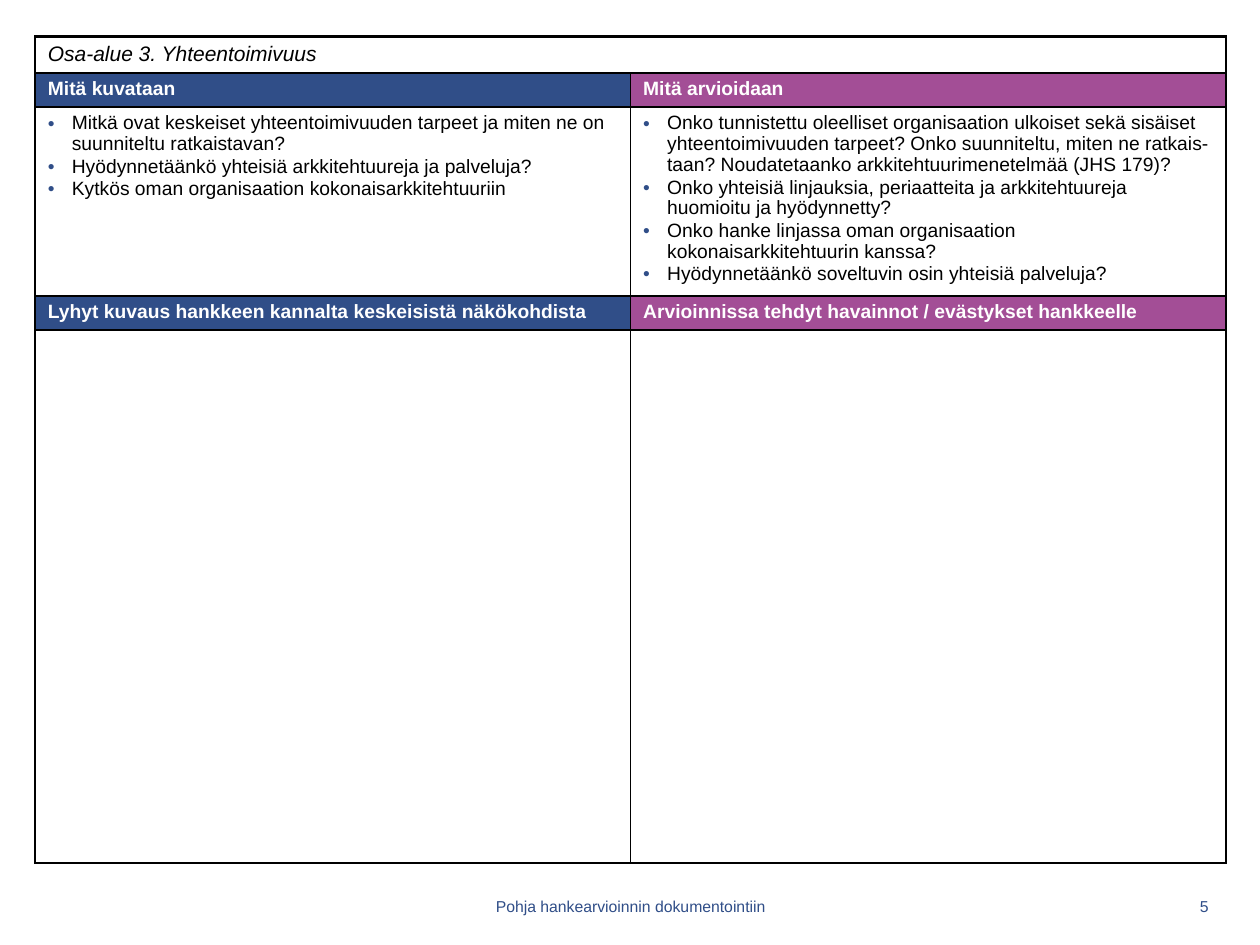
from lxml.etree import SubElement as Sub
from pptx import Presentation
from pptx.dml.color import RGBColor
from pptx.enum.text import MSO_ANCHOR as Anchor, PP_ALIGN as Align
from pptx.oxml.ns import qn
from pptx.util import Inches, Pt

BLUE, PLUM, WHITE, BLACK = "304E88", "A34E96", "FFFFFF", "000000"
WIDTHS = [4.725, 4.725]
HEIGHTS = [0.29, 0.27, 1.5, 0.27, 4.23]
TITLE = "Osa-alue 3. Yhteentoimivuus"
HEADS = {
    1: ["Mitä kuvataan", "Mitä arvioidaan"],
    3: ["Lyhyt kuvaus hankkeen kannalta keskeisistä näkökohdista",
        "Arvioinnissa tehdyt havainnot / evästykset hankkeelle"],
}
POINTS = [
    ["Mitkä ovat keskeiset yhteentoimivuuden tarpeet ja miten ne on "
     "suunniteltu ratkaistavan?",
     "Hyödynnetäänkö yhteisiä arkkitehtuureja ja palveluja?",
     "Kytkös oman organisaation kokonaisarkkitehtuuriin"],
    ["Onko tunnistettu oleelliset organisaation ulkoiset sekä sisäiset "
     "yhteentoimivuuden tarpeet? Onko suunniteltu, miten ne ratkais-taan? "
     "Noudatetaanko arkkitehtuurimenetelmää (JHS 179)?",
     "Onko yhteisiä linjauksia, periaatteita ja arkkitehtuureja "
     "huomioitu ja hyödynnetty?",
     "Onko hanke linjassa oman organisaation kokonaisarkkitehtuurin kanssa?",
     "Hyödynnetäänkö soveltuvin osin yhteisiä palveluja?"],
]


def tint(code):
    return RGBColor.from_string(code)


class Page:
    """Holds the style and the current slide."""

    def __init__(self, slide, font="Arial"):
        self.slide = slide
        self.font = font

    def run(self, para, text, size, color, bold=False, italic=False):
        run = para.add_run()
        run.text = text
        font = run.font
        font.name, font.size = self.font, Pt(size)
        font.bold, font.italic = bold, italic
        font.color.rgb = tint(color)

    def label(self, text, left, width, align):
        box = self.slide.shapes.add_textbox(
            Inches(left), Inches(7.03), Inches(width), Inches(0.32))
        frame = box.text_frame
        frame.word_wrap = True
        frame.vertical_anchor = Anchor.MIDDLE
        para = frame.paragraphs[0]
        para.alignment = align
        self.run(para, text, 9, BLUE)

    def table(self, left, top, widths, heights):
        grid = self.slide.shapes.add_table(
            len(heights), len(widths), Inches(left), Inches(top),
            Inches(sum(widths)), Inches(sum(heights))).table
        grid.first_row = grid.horz_banding = False
        for col, width in zip(grid.columns, widths):
            col.width = Inches(width)
        for row, height in zip(grid.rows, heights):
            row.height = Inches(height)
        return grid

    def edges(self, cell, sides):
        props = cell._tc.get_or_add_tcPr()
        for side, outer in sides.items():
            line = Sub(props, qn(f"a:ln{side}"), w=str(Pt(1.5 if outer else 1)))
            fill = Sub(line, qn("a:solidFill"))
            Sub(fill, qn("a:srgbClr"), val=BLACK)

    def bullet(self, para):
        props = para._p.get_or_add_pPr()
        props.set("marL", str(Inches(0.19)))
        props.set("indent", str(Inches(-0.19)))
        color = Sub(props, qn("a:buClr"))
        Sub(color, qn("a:srgbClr"), val=BLUE)
        Sub(props, qn("a:buFont"), typeface=self.font)
        Sub(props, qn("a:buChar"), char="•")

    def text(self, cell, lines, size=11, color=BLACK, dots=False, **style):
        frame = cell.text_frame
        for i, line in enumerate(lines):
            para = frame.add_paragraph() if i else frame.paragraphs[0]
            if dots:
                self.bullet(para)
            para.line_spacing = 0.97
            if i:
                para.space_before = Pt(1)
            self.run(para, line, size, color, **style)


def main():
    deck = Presentation()
    deck.slide_width, deck.slide_height = Inches(10), Inches(7.5)
    page = Page(deck.slides.add_slide(deck.slide_layouts[6]))

    grid = page.table(0.28, 0.29, WIDTHS, HEIGHTS)
    last = len(HEIGHTS) - 1
    for r in range(len(HEIGHTS)):
        for c, shade in enumerate([BLUE, PLUM]):
            cell = grid.cell(r, c)
            page.edges(cell, {"L": c == 0, "R": c == 1 or r == 0,
                              "T": r == 0, "B": r == last})
            cell.fill.solid()
            cell.fill.fore_color.rgb = tint(shade if r in HEADS else WHITE)
            if r in HEADS:
                page.text(cell, [HEADS[r][c]], color=WHITE, bold=True)
    grid.cell(0, 0).merge(grid.cell(0, 1))
    page.text(grid.cell(0, 0), [TITLE], size=12, italic=True)
    for c, lines in enumerate(POINTS):
        page.text(grid.cell(2, c), lines, dots=True)

    page.label("Pohja hankearvioinnin dokumentointiin", 3.42, 3.17, Align.CENTER)
    page.label("5", 9.17, 0.52, Align.RIGHT)
    deck.save("out.pptx")


if __name__ == "__main__":
    main()
